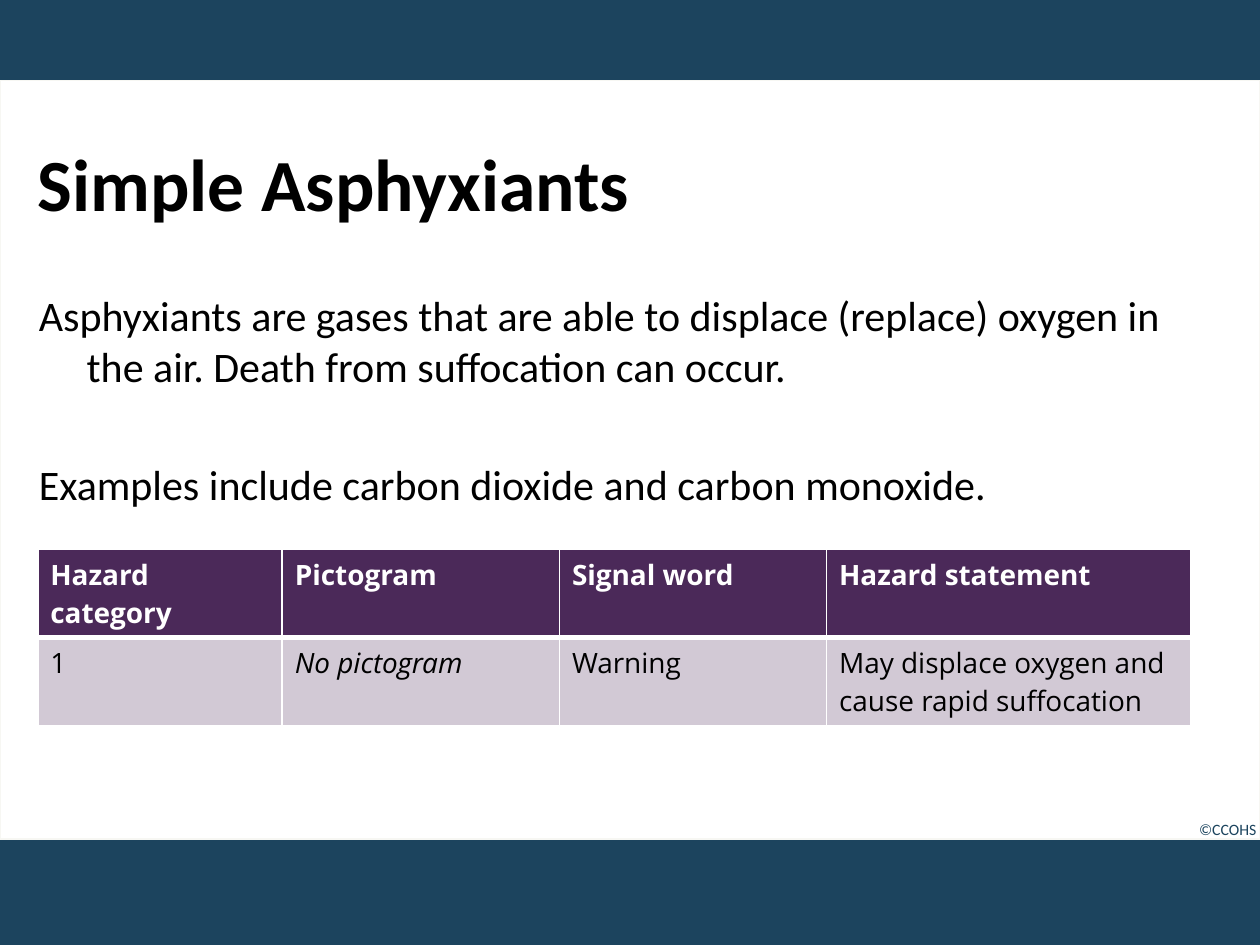
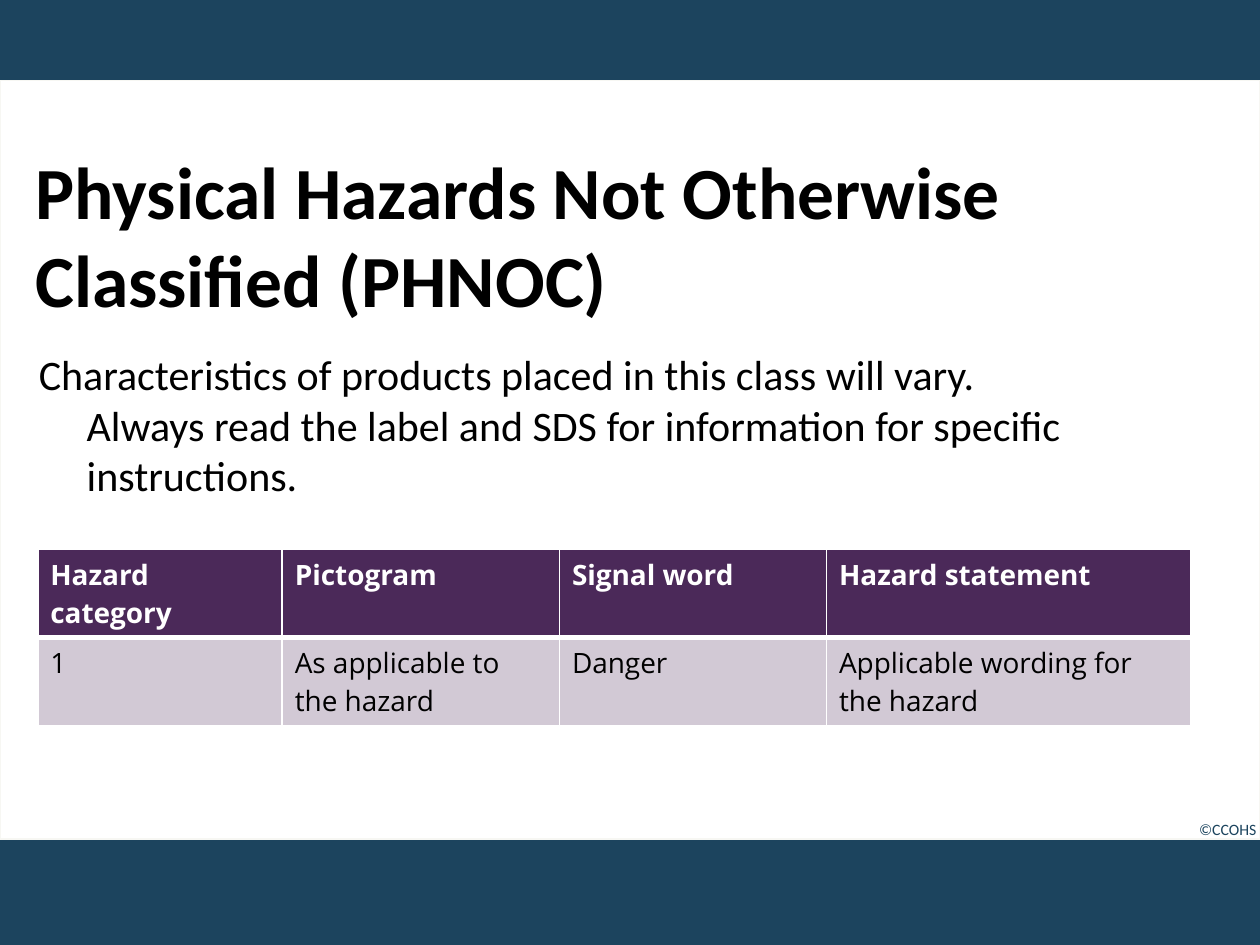
from lxml import etree
from pptx import Presentation
from pptx.dml.color import RGBColor
from pptx.enum import shapes, text
from pptx.oxml import ns
from pptx.util import Inches, Pt

NAVY = RGBColor(0x1C, 0x44, 0x5E)
WHITE = RGBColor(0xFF, 0xFF, 0xFF)
EDGE = RGBColor(0xF7, 0xF7, 0xF3)
BLACK = RGBColor(0, 0, 0)
PLUM = RGBColor(0x4B, 0x29, 0x59)
LILAC = RGBColor(0xD2, 0xC9, 0xD5)

SANS = "Calibri"
GRID = "Open Sans"
HEADS = ["Hazard category", "Pictogram", "Signal word", "Hazard statement"]
COLS = [1.94, 2.2, 2.12, 2.89]
ROW = 0.7
INDENT = 0.38

SLIDES = [
    dict(
        title="Simple Asphyxiants",
        head=(0.2, 1.07, 8.05, 0.75),
        paras=["Asphyxiants are gases that are able to displace (replace) "
               "oxygen in the air. Death from suffocation can occur.",
               "Examples include carbon dioxide and carbon monoxide."],
        body=(0.21, 2.25, 9.11, 1.79),
        row=["1", "No pictogram", "Warning",
             "May displace oxygen and cause rapid suffocation"],
        slant={1},
    ),
    dict(
        title="Physical Hazards Not Otherwise Classified (PHNOC)",
        head=(0.18, 1.17, 8.05, 1.38),
        paras=["Characteristics of products placed in this class will vary.\v"
               "Always read the label and SDS for information for specific "
               "instructions."],
        body=(0.21, 2.72, 8.67, 1.31),
        row=["1", "As applicable to the hazard", "Danger",
             "Applicable wording for the hazard"],
        slant=set(),
    ),
]


def inches(box):
    return [Inches(n) for n in box]


def write(para, words, size, color, face=SANS, bold=False, italic=False):
    """Add words to a paragraph, with a line break at each vertical tab."""
    for i, part in enumerate(words.split("\v")):
        if i:
            para.add_line_break()
        run = para.add_run()
        run.text = part
        font = run.font
        font.name, font.size = face, Pt(size)
        font.bold, font.italic = bold, italic
        font.color.rgb = color


def add_panel(slide, box):
    """Place the white panel behind the title."""
    panel = slide.shapes.add_shape(shapes.MSO_SHAPE.RECTANGLE, *inches(box))
    panel.shadow.inherit = False
    panel.fill.solid()
    panel.fill.fore_color.rgb = WHITE
    panel.line.color.rgb = EDGE
    panel.line.width = Pt(0.75)
    slide.shapes.title.element.addprevious(panel.element)


def add_credit(slide, box):
    frame = slide.shapes.add_textbox(*inches(box)).text_frame
    frame.word_wrap = True
    para = frame.paragraphs[0]
    para.alignment = text.PP_ALIGN.RIGHT
    write(para, "©CCOHS", 9, NAVY)


def set_title(slide, words, box):
    title = slide.shapes.title
    title.left, title.top, title.width, title.height = inches(box)
    frame = title.text_frame
    frame.word_wrap = True
    frame.auto_size = text.MSO_AUTO_SIZE.NONE
    frame.vertical_anchor = text.MSO_ANCHOR.MIDDLE
    para = frame.paragraphs[0]
    para.alignment = text.PP_ALIGN.LEFT
    write(para, words, 42, BLACK, bold=True)


def add_body(slide, paras, box):
    frame = slide.shapes.add_textbox(*inches(box)).text_frame
    frame.word_wrap = True
    for i, words in enumerate(paras):
        para = frame.add_paragraph() if i else frame.paragraphs[0]
        props = para._p.get_or_add_pPr()
        props.set("marL", str(Inches(INDENT)))
        props.set("indent", str(-Inches(INDENT)))
        if i:
            para.space_before = Pt(39)
        write(para, words, 24, BLACK)


def add_edges(cell, top, base):
    """Draw white cell borders, with widths in points."""
    props = cell._tc.get_or_add_tcPr()
    for side, width in zip("LRTB", (1, 1, top, base)):
        line = etree.SubElement(props, ns.qn(f"a:ln{side}"), w=str(Pt(width)))
        fill = etree.SubElement(line, ns.qn("a:solidFill"))
        etree.SubElement(fill, ns.qn("a:srgbClr"), val=str(WHITE))


def add_grid(slide, row, slant, left, top):
    """Add the hazard table; slant holds the columns set in italics."""
    box = inches((left, top, sum(COLS), 2 * ROW))
    table = slide.shapes.add_table(2, len(COLS), *box).table
    for col, width in zip(table.columns, COLS):
        col.width = Inches(width)
    for r, words in enumerate((HEADS, row)):
        head = r == 0
        for c, word in enumerate(words):
            cell = table.cell(r, c)
            add_edges(cell, *((1, 3) if head else (3, 1)))
            cell.fill.solid()
            cell.fill.fore_color.rgb = PLUM if head else LILAC
            write(cell.text_frame.paragraphs[0], word, 16,
                  WHITE if head else BLACK, GRID, head,
                  not head and c in slant)


def add_hazard(deck, data):
    slide = deck.slides.add_slide(deck.slide_layouts[5])
    add_panel(slide, (0, 0.64, 10, 6.02))
    add_credit(slide, (9.24, 6.46, 0.83, 0.25))
    set_title(slide, data["title"], data["head"])
    add_body(slide, data["paras"], data["body"])
    add_grid(slide, data["row"], data["slant"], 0.3, 4.36)


def main():
    deck = Presentation()
    deck.slide_width, deck.slide_height = Inches(10), Inches(7.5)
    back = deck.slide_master.background.fill
    back.solid()
    back.fore_color.rgb = NAVY
    for data in SLIDES:
        add_hazard(deck, data)
    deck.save("out.pptx")


if __name__ == "__main__":
    main()
